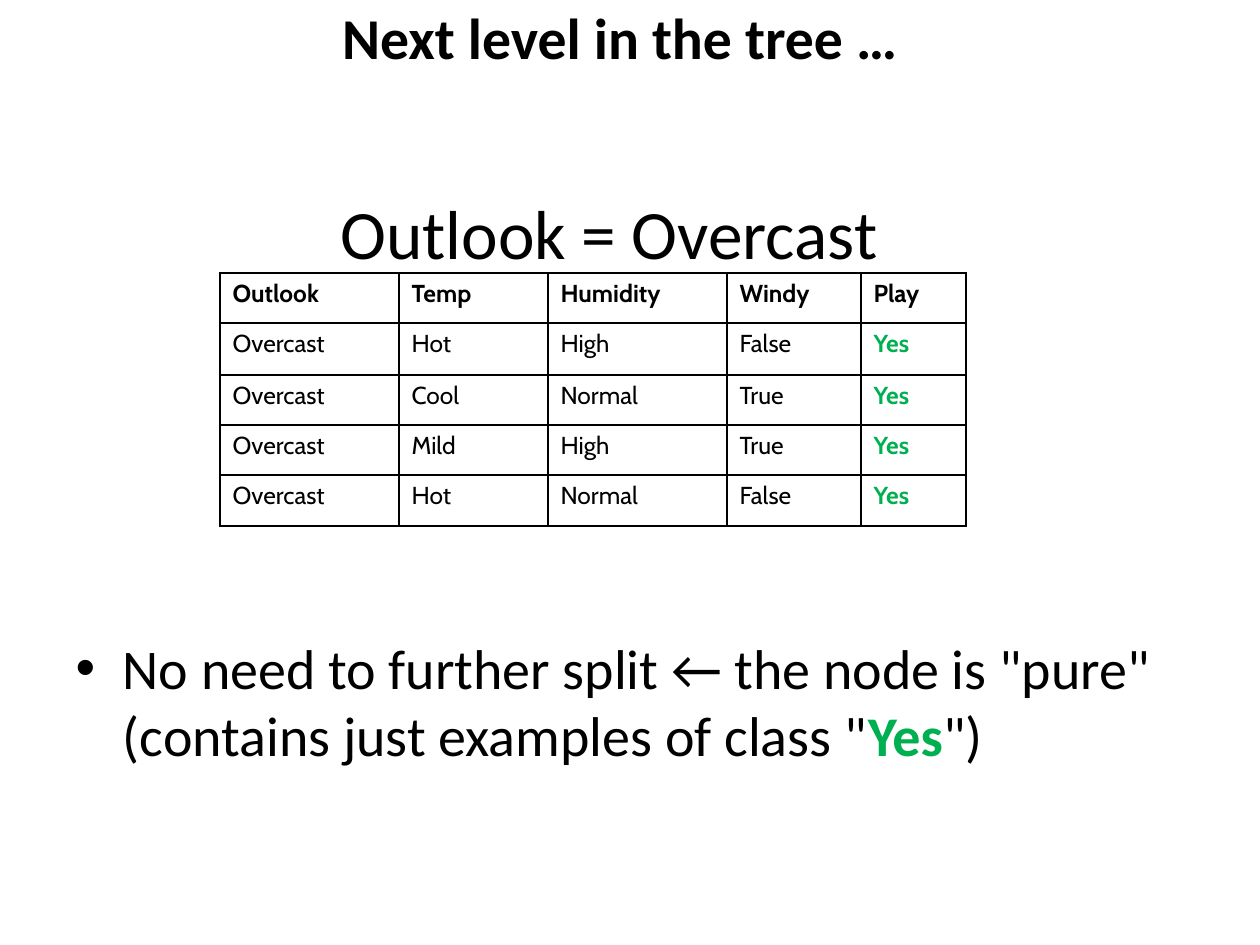
from pptx import Presentation
from pptx.dml.color import RGBColor
from pptx.enum.text import MSO_ANCHOR, MSO_AUTO_SIZE, PP_ALIGN
from pptx.oxml import parse_xml
from pptx.oxml.ns import nsdecls
from pptx.util import Pt

PIXEL = 914400 / 126
BLACK = RGBColor(0x00, 0x00, 0x00)
GREEN = RGBColor(0x00, 0xB0, 0x50)
WHITE = RGBColor(0xFF, 0xFF, 0xFF)

COLUMN_WIDTHS = [179, 149, 179, 134, 105]
ROW_HEIGHTS = [50, 52, 50, 50, 51]
ROWS = [
    ["Outlook", "Temp", "Humidity", "Windy", "Play"],
    ["Overcast", "Hot", "High", "False", "Yes"],
    ["Overcast", "Cool", "Normal", "True", "Yes"],
    ["Overcast", "Mild", "High", "True", "Yes"],
    ["Overcast", "Hot", "Normal", "False", "Yes"],
]


def px(length):
    """Turn pixels into EMU."""
    return round(length * PIXEL)


def place(shape, box):
    """Move and size a shape to a box in pixels."""
    shape.left, shape.top, shape.width, shape.height = map(px, box)


def format_run(run, size, name="Calibri", color=BLACK, bold=False):
    """Set the font of one run."""
    font = run.font
    font.size, font.name, font.bold = Pt(size), name, bold
    font.color.rgb = color


def fill_heading(shape, text, size, bold=False):
    """Write one centred line into a heading shape."""
    frame = shape.text_frame
    frame.text = text
    frame.word_wrap = True
    frame.auto_size = MSO_AUTO_SIZE.NONE
    frame.vertical_anchor = MSO_ANCHOR.MIDDLE
    paragraph = frame.paragraphs[0]
    paragraph.alignment = PP_ALIGN.CENTER
    format_run(paragraph.runs[0], size, bold=bold)


def add_banner(slide, box):
    """Add the bold heading at the top of the slide."""
    banner = slide.shapes.add_textbox(*map(px, box))
    fill_heading(banner, "Next level in the tree …", 33, bold=True)


def fill_title(slide, box):
    """Write the title above the table."""
    place(slide.shapes.title, box)
    fill_heading(slide.shapes.title, "Outlook = Overcast", 39.6)


def fill_body(slide, box):
    """Write the bulleted conclusion with its class name in green."""
    body = slide.placeholders[1]
    place(body, box)
    body.text_frame.auto_size = MSO_AUTO_SIZE.NONE
    paragraph = body.text_frame.paragraphs[0]
    paragraph.text = 'No need to further split ← the node is "pure"\v(contains just examples of class "'
    for text in ("Yes", '")'):
        paragraph.add_run().text = text
    for run in paragraph.runs:
        is_class = run.text == "Yes"
        format_run(run, 32, color=GREEN if is_class else BLACK, bold=is_class)


def add_borders(cell):
    """Draw a thin black line on each side of a cell."""
    properties = cell._tc.get_or_add_tcPr()
    for index, side in enumerate(("lnL", "lnR", "lnT", "lnB")):
        properties.insert(index, parse_xml(
            f'<a:{side} {nsdecls("a")} w="12700"><a:solidFill>'
            f'<a:srgbClr val="{BLACK}"/></a:solidFill></a:{side}>'))


def add_examples_table(slide, left, top):
    """Add the table of overcast examples."""
    box = (left, top, sum(COLUMN_WIDTHS), sum(ROW_HEIGHTS))
    table = slide.shapes.add_table(len(ROWS), len(COLUMN_WIDTHS), *map(px, box)).table
    for column, width in zip(table.columns, COLUMN_WIDTHS):
        column.width = px(width)
    for row, height, texts in zip(table.rows, ROW_HEIGHTS, ROWS):
        row.height = px(height)
        for cell, text in zip(row.cells, texts):
            cell.text = text
            cell.fill.solid()
            cell.fill.fore_color.rgb = WHITE
            is_class = text == "Yes"
            format_run(cell.text_frame.paragraphs[0].runs[0], 14, "Cabin",
                       GREEN if is_class else BLACK, is_class or texts is ROWS[0])
            add_borders(cell)


def main():
    """Build and save the slide."""
    presentation = Presentation()
    presentation.slide_width, presentation.slide_height = px(1260), px(945)
    slide = presentation.slides.add_slide(presentation.slide_layouts[1])
    fill_title(slide, (42, 208, 1134, 48))
    fill_body(slide, (63, 627, 1134, 170))
    add_examples_table(slide, 220, 273)
    add_banner(slide, (53, 0, 1134, 73))
    presentation.save("out.pptx")


if __name__ == "__main__":
    main()
